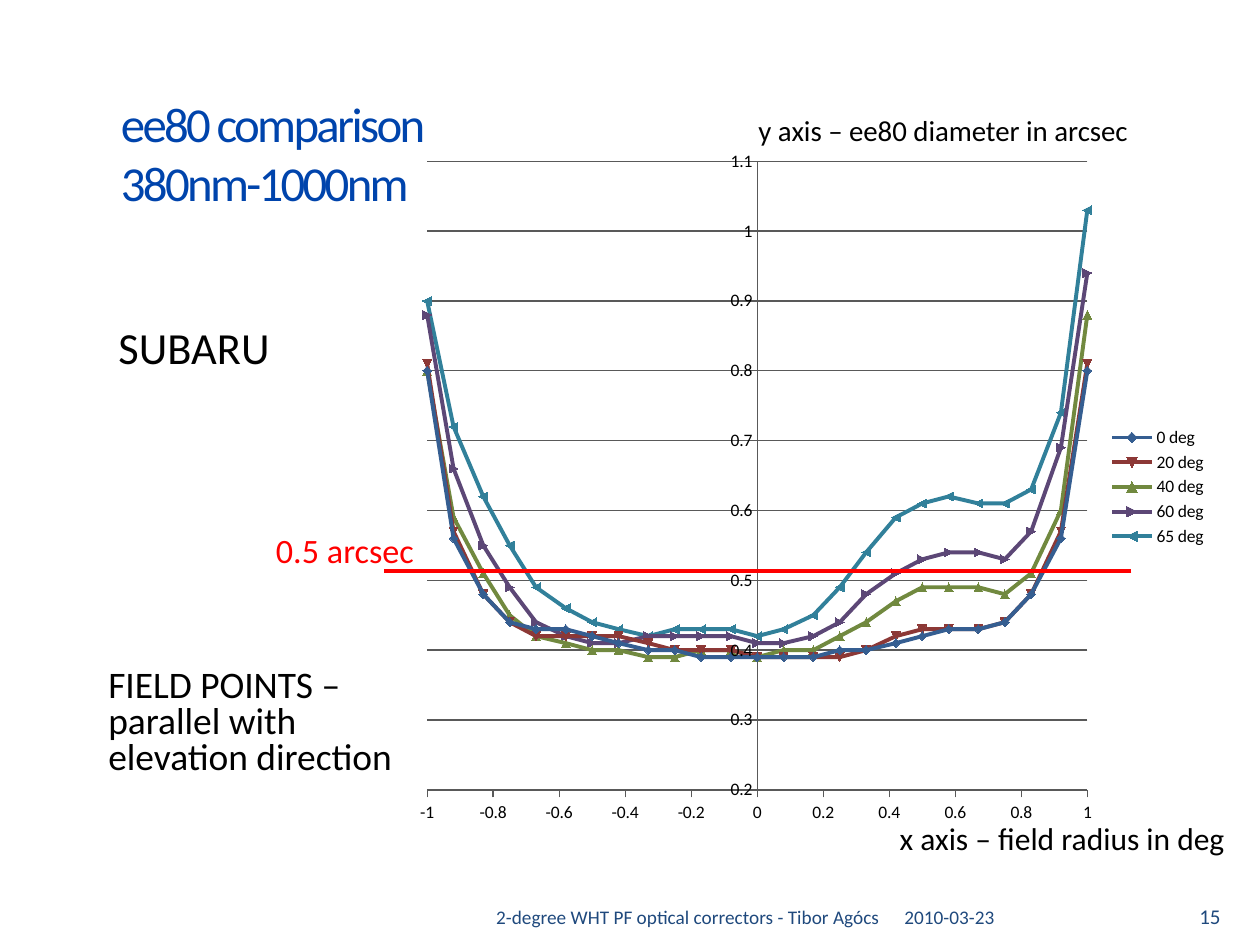
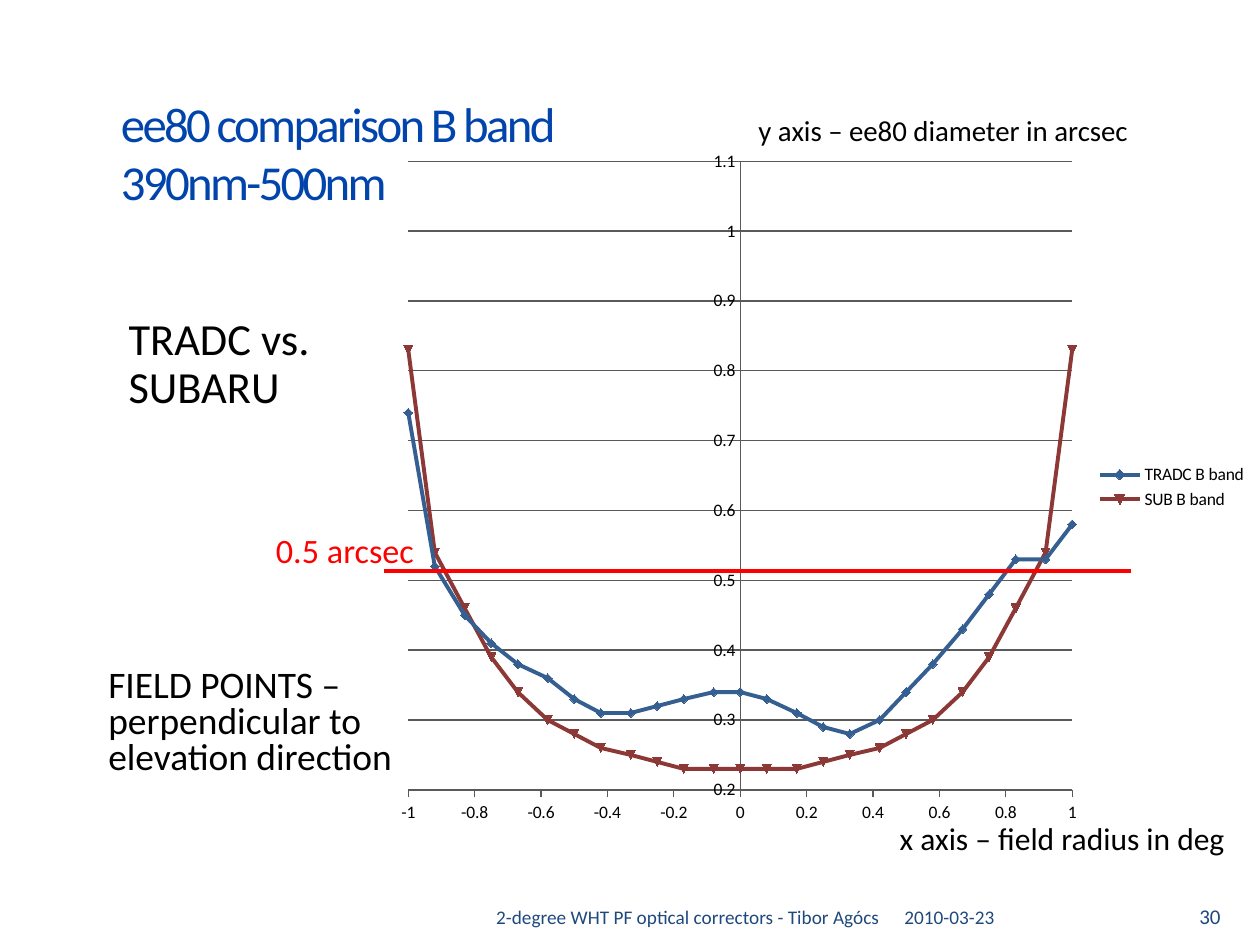
from lxml import etree
from pptx import Presentation
from pptx.chart.data import XyChartData
from pptx.dml.color import RGBColor
from pptx.enum import chart as chart_enum, shapes, text
from pptx.oxml import ns
from pptx.util import Inches, Pt

FONT = "Calibri"
BLACK, RED, TITLE_BLUE, FOOTER_BLUE, GRID = "000000", "FF0000", "0044AC", "1F497D", "595959"
SERIES_COLOURS = ["355E91", "8C3836", "71893F", "5C4776", "31809A"]
FIELD_RADII = [round(step / 12, 2) for step in range(-12, 13)]
LABEL_INSETS = (0, 0.05, 0, 0)
FOOTER_INSETS = (0.1, 0.05, 0.1, 0.05)
PLOT_TOP, PLOT_HEIGHT = 1.28, 4.99
CHART_TOP, CHART_HEIGHT = 1.09, 5.55

SUBARU_BY_ANGLE = {
    "0 deg": [0.8, 0.56, 0.48, 0.44, 0.43, 0.43, 0.42, 0.41, 0.4, 0.4, 0.39, 0.39, 0.39,
              0.39, 0.39, 0.4, 0.4, 0.41, 0.42, 0.43, 0.43, 0.44, 0.48, 0.56, 0.8],
    "20 deg": [0.81, 0.57, 0.48, 0.44, 0.42, 0.42, 0.42, 0.42, 0.41, 0.4, 0.4, 0.4, 0.39,
               0.39, 0.39, 0.39, 0.4, 0.42, 0.43, 0.43, 0.43, 0.44, 0.48, 0.57, 0.81],
    "40 deg": [0.8, 0.59, 0.51, 0.45, 0.42, 0.41, 0.4, 0.4, 0.39, 0.39, 0.4, 0.4, 0.39,
               0.4, 0.4, 0.42, 0.44, 0.47, 0.49, 0.49, 0.49, 0.48, 0.51, 0.6, 0.88],
    "60 deg": [0.88, 0.66, 0.55, 0.49, 0.44, 0.42, 0.41, 0.41, 0.42, 0.42, 0.42, 0.42, 0.41,
               0.41, 0.42, 0.44, 0.48, 0.51, 0.53, 0.54, 0.54, 0.53, 0.57, 0.69, 0.94],
    "65 deg": [0.9, 0.72, 0.62, 0.55, 0.49, 0.46, 0.44, 0.43, 0.42, 0.43, 0.43, 0.43, 0.42,
               0.43, 0.45, 0.49, 0.54, 0.59, 0.61, 0.62, 0.61, 0.61, 0.63, 0.74, 1.03],
}
B_BAND_BY_DESIGN = {
    "TRADC B band": [0.74, 0.52, 0.45, 0.41, 0.38, 0.36, 0.33, 0.31, 0.31, 0.32, 0.33, 0.34, 0.34,
                     0.33, 0.31, 0.29, 0.28, 0.3, 0.34, 0.38, 0.43, 0.48, 0.53, 0.53, 0.58],
    "SUB B band": [0.83, 0.54, 0.46, 0.39, 0.34, 0.3, 0.28, 0.26, 0.25, 0.24, 0.23, 0.23, 0.23,
                   0.23, 0.23, 0.24, 0.25, 0.26, 0.28, 0.3, 0.34, 0.39, 0.46, 0.54, 0.83],
}


def colour(value):
    """Turn a hex string into a colour."""
    return RGBColor.from_string(value)


def style_font(font, size, hex_colour):
    """Set the shared typeface with a size and colour."""
    font.name, font.size = FONT, Pt(size)
    font.color.rgb = colour(hex_colour)


def add_text(slide, box, content, size, hex_colour=BLACK, insets=LABEL_INSETS, spacing=1.0, align=None):
    """Add a bottom-anchored text box holding one paragraph."""
    frame = slide.shapes.add_textbox(*map(Inches, box)).text_frame
    frame.word_wrap = True
    frame.vertical_anchor = text.MSO_ANCHOR.BOTTOM
    frame.margin_left, frame.margin_top, frame.margin_right, frame.margin_bottom = map(Inches, insets)
    paragraph = frame.paragraphs[0]
    paragraph.line_spacing, paragraph.alignment = spacing, align
    run = paragraph.add_run()
    run.text = content
    style_font(run.font, size, hex_colour)


def set_title(slide, box, lines):
    """Place the title and write its lines with tight letter spacing."""
    title = slide.shapes.title
    title.left, title.top, title.width, title.height = map(Inches, box)
    frame = title.text_frame
    frame.word_wrap = True
    frame.auto_size = text.MSO_AUTO_SIZE.NONE
    frame.vertical_anchor = text.MSO_ANCHOR.MIDDLE
    paragraph = frame.paragraphs[0]
    paragraph.alignment = text.PP_ALIGN.LEFT
    for index, line in enumerate(lines):
        if index:
            paragraph.add_line_break()
        run = paragraph.add_run()
        run.text = line
        style_font(run.font, 27.9, TITLE_BLUE)
        run.font._element.set("spc", "-150")


def set_plot_layout(chart, chart_left, chart_width, plot_left, plot_width):
    """Fix the inner plot area at a slide position."""
    plot_area = chart._chartSpace.chart.plotArea
    for old_layout in plot_area.findall(ns.qn("c:layout")):
        plot_area.remove(old_layout)
    layout = etree.Element(ns.qn("c:layout"))
    manual = etree.SubElement(layout, ns.qn("c:manualLayout"))
    settings = {
        "layoutTarget": "inner", "xMode": "edge", "yMode": "edge",
        "x": (plot_left - chart_left) / chart_width,
        "y": (PLOT_TOP - CHART_TOP) / CHART_HEIGHT,
        "w": plot_width / chart_width,
        "h": PLOT_HEIGHT / CHART_HEIGHT,
    }
    for name, value in settings.items():
        etree.SubElement(manual, ns.qn(f"c:{name}")).set("val", str(value))
    plot_area.insert(0, layout)


def style_axis(axis, minimum, maximum, step, tick_mark):
    """Set the scale, ticks and line of an axis."""
    axis.minimum_scale, axis.maximum_scale, axis.major_unit = minimum, maximum, step
    axis.major_tick_mark = tick_mark
    axis.minor_tick_mark = chart_enum.XL_TICK_MARK.NONE
    axis.tick_label_position = chart_enum.XL_TICK_LABEL_POSITION.NEXT_TO_AXIS
    axis.format.line.color.rgb = colour(GRID)
    axis.format.line.width = Pt(0.75)


def add_ee80_chart(slide, left, width, plot_left, plot_width, curves):
    """Add the scatter chart of ee80 diameter against field radius."""
    data = XyChartData()
    for name, diameters in curves.items():
        series = data.add_series(name)
        for radius, diameter in zip(FIELD_RADII, diameters):
            series.add_data_point(radius, diameter)
    box = map(Inches, (left, CHART_TOP, width, CHART_HEIGHT))
    chart = slide.shapes.add_chart(chart_enum.XL_CHART_TYPE.XY_SCATTER_LINES, *box, data).chart
    style_font(chart.font, 10, BLACK)
    chart.has_title = False
    chart.has_legend = True
    chart.legend.position = chart_enum.XL_LEGEND_POSITION.RIGHT
    chart.legend.include_in_layout = False
    ticks = chart_enum.XL_TICK_MARK
    style_axis(chart.category_axis, -1, 1, 0.2, ticks.OUTSIDE)
    style_axis(chart.value_axis, 0.2, 1.1, 0.1, ticks.NONE)
    chart.category_axis.has_major_gridlines = False
    chart.value_axis.has_major_gridlines = True
    grid_line = chart.value_axis.major_gridlines.format.line
    grid_line.color.rgb = colour(GRID)
    grid_line.width = Pt(0.75)
    plot = chart.plots[0]
    plot.vary_by_categories = False
    for series, hex_colour in zip(plot.series, SERIES_COLOURS):
        series.smooth = False
        series.format.line.color.rgb = colour(hex_colour)
        series.format.line.width = Pt(2.25)
        marker = series.marker.format
        marker.fill.solid()
        marker.fill.fore_color.rgb = colour(hex_colour)
        marker.line.color.rgb = colour(hex_colour)
    set_plot_layout(chart, left, width, plot_left, plot_width)


def add_threshold(slide):
    """Draw the red half-arcsecond line with its label."""
    ends = map(Inches, (8.98, 4.53, 3.05, 4.53))
    line = slide.shapes.add_connector(shapes.MSO_CONNECTOR.STRAIGHT, *ends)
    line.line.color.rgb = colour(RED)
    line.line.width = Pt(2.25)
    etree.SubElement(line._element.spPr, ns.qn("a:effectLst"))
    add_text(slide, (2.19, 3.98, 1.25, 0.55), "0.5 arcsec", 19.5, RED)


def add_axis_captions(slide):
    """Name both chart axes."""
    add_text(slide, (7.14, 6.33, 2.86, 0.47), "x axis – field radius in deg", 18)
    add_text(slide, (6.02, 0.7, 3.13, 0.47), "y axis – ee80 diameter in arcsec", 16.5, spacing=0.9)


def add_footer(slide, number):
    """Add the talk name, date and slide number."""
    add_text(slide, (1, 7.02, 6.08, 0.4), "2-degree WHT PF optical correctors - Tibor Agócs", 11,
             FOOTER_BLUE, FOOTER_INSETS, align=text.PP_ALIGN.RIGHT)
    add_text(slide, (7.08, 7.02, 2.33, 0.4), "2010-03-23", 11, FOOTER_BLUE, FOOTER_INSETS)
    add_text(slide, (9.42, 7.02, 0.5, 0.4), str(number), 12, FOOTER_BLUE, FOOTER_INSETS)


def add_comparison_slide(presentation, number, title_box, title_lines, chart_layout, curves,
                         design_box, design, direction):
    """Build one ee80 comparison slide."""
    slide = presentation.slides.add_slide(presentation.slide_layouts[5])
    add_footer(slide, number)
    add_ee80_chart(slide, *chart_layout, curves)
    add_threshold(slide)
    set_title(slide, title_box, title_lines)
    add_text(slide, design_box, design, 25.4, spacing=0.9)
    add_text(slide, (0.86, 5.23, 2.58, 0.94), f"FIELD POINTS – {direction} elevation direction", 21.4, spacing=0.8)
    add_axis_captions(slide)


def main():
    """Build and save the presentation."""
    presentation = Presentation()
    presentation.slide_width, presentation.slide_height = Inches(10), Inches(7.5)
    add_comparison_slide(
        presentation, 15, (0.86, 0.7, 2.86, 1.02), ["ee80 comparison", "380nm-1000nm"],
        (3.2, 6.48, 3.39, 5.24), SUBARU_BY_ANGLE,
        (0.94, 2.42, 1.95, 0.55), "SUBARU", "parallel with")
    add_comparison_slide(
        presentation, 30, (0.86, 0.62, 3.83, 1.17), ["ee80 comparison B band", "390nm-500nm"],
        (3.05, 6.95, 3.24, 5.27), B_BAND_BY_DESIGN,
        (1.02, 2.42, 1.95, 0.86), "TRADC vs. SUBARU", "perpendicular to")
    presentation.save("out.pptx")


if __name__ == "__main__":
    main()
